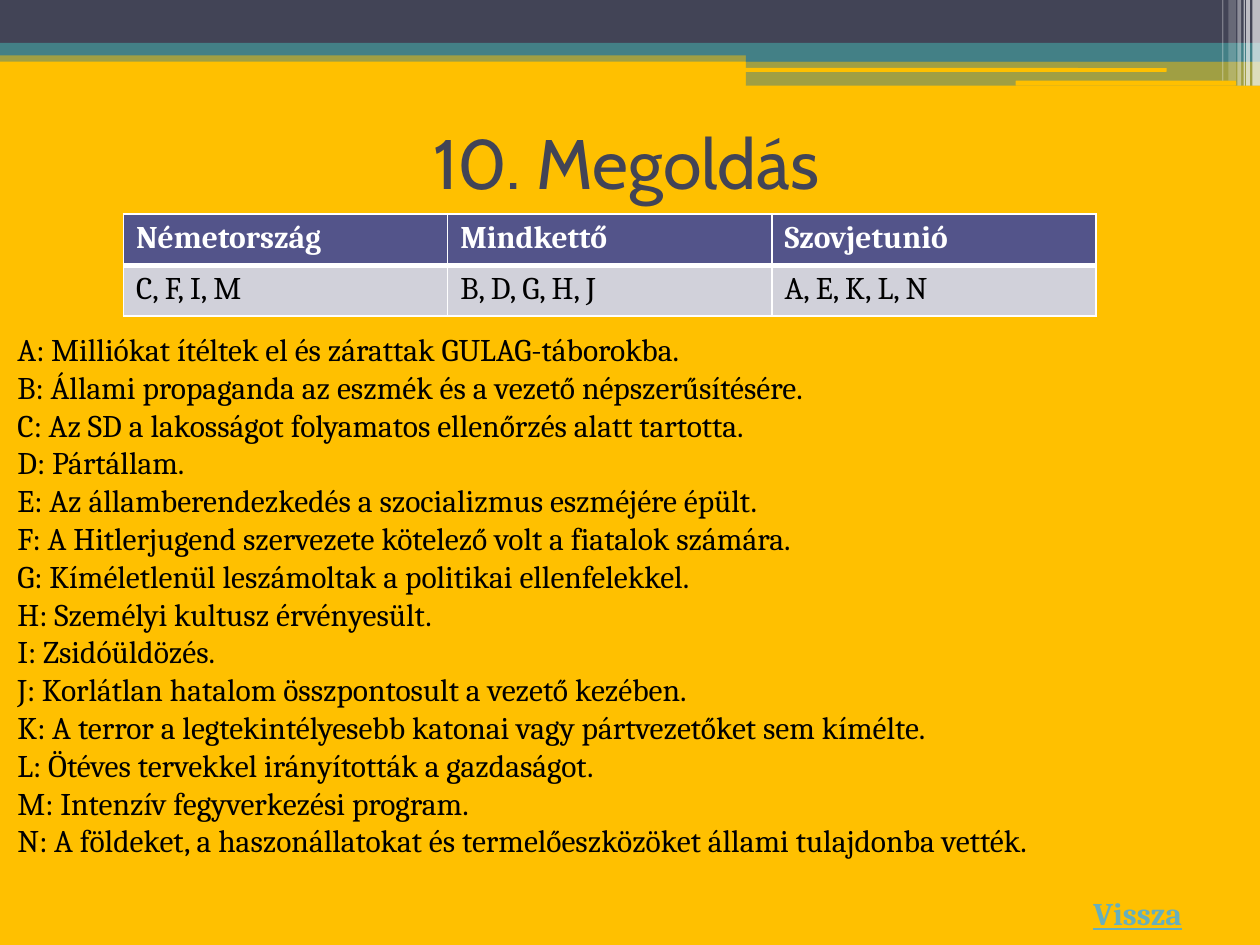
from lxml import etree
from pptx import Presentation, util as u
from pptx.dml.color import RGBColor
from pptx.enum import shapes, text
from pptx.oxml.ns import qn

COLORS = {
    "back": "FFC000", "navy": "424456", "teal": "438086", "white": "FFFFFF",
    "black": "000000", "head": "53548A", "body": "D1D1DA", "link": "67AFBD",
}
COLS, ROWS = 100, 75
RECT = shapes.MSO_SHAPE.RECTANGLE
ROUND = shapes.MSO_SHAPE.ROUNDED_RECTANGLE


class Deck:
    """Holds the style and the current slide; lengths are grid columns and rows."""

    fonts = {
        "title": {"name": "Cabin", "size": u.Pt(40), "color": "navy"},
        "text": {"name": "Cambria", "size": u.Pt(18), "color": "black", "bold": False},
        "head": {"name": "Cambria", "size": u.Pt(18), "color": "white", "bold": True},
        "link": {"name": "Cambria", "size": u.Pt(18), "color": "link",
                 "bold": True, "underline": True},
    }

    def __init__(self, width, height):
        self.prs = Presentation()
        self.prs.slide_width, self.prs.slide_height = u.Inches(width), u.Inches(height)
        self.col = self.prs.slide_width / COLS
        self.row = self.prs.slide_height / ROWS

    def slide(self, back):
        self.s = self.prs.slides.add_slide(self.prs.slide_layouts[6])
        self.paint(self.s.background.fill, back)

    def box(self, x, y, w, h):
        return [round(v) for v in (x * self.col, y * self.row, w * self.col, h * self.row)]

    def paint(self, fill, color):
        fill.solid()
        fill.fore_color.rgb = RGBColor.from_string(COLORS[color])

    def bar(self, at, color, alpha=100, kind=RECT):
        sp = self.s.shapes.add_shape(kind, *self.box(*at))
        sp.shadow.inherit = False
        sp.line.fill.background()
        self.paint(sp.fill, color)
        if alpha < 100:
            clr = sp._element.spPr.find(qn("a:solidFill"))[0]
            etree.SubElement(clr, qn("a:alpha"), val=str(alpha * 1000))

    def add_words(self, p, words, style):
        r = p.add_run()
        r.text = words
        for key, value in self.fonts[style].items():
            if key == "color":
                r.font.color.rgb = RGBColor.from_string(COLORS[value])
            else:
                setattr(r.font, key, value)

    def text(self, at, lines, style, **frame):
        tf = self.s.shapes.add_textbox(*self.box(*at)).text_frame
        for key, value in {"word_wrap": True, **frame}.items():
            setattr(tf, key, value)
        for i, line in enumerate(lines):
            p = tf.add_paragraph() if i else tf.paragraphs[0]
            self.add_words(p, line, style)
        return tf

    def stroke(self, tag, color, width):
        ln = etree.Element(qn(tag), w=str(u.Pt(width)))
        fill = etree.SubElement(ln, qn("a:solidFill"))
        etree.SubElement(fill, qn("a:srgbClr"), val=COLORS[color])
        return ln

    def table(self, at, rows):
        tb = self.s.shapes.add_table(len(rows), len(rows[0]), *self.box(*at)).table
        for i, row in enumerate(rows):
            for j, words in enumerate(row):
                cell = tb.cell(i, j)
                self.add_words(cell.text_frame.paragraphs[0], words, "text" if i else "head")
                # Borders precede the fill; the rule under the header is thicker
                tcPr = cell._tc.get_or_add_tcPr()
                for side in ("lnL", "lnR", "lnT", "lnB"):
                    heavy = side == ("lnT" if i else "lnB")
                    tcPr.append(self.stroke("a:" + side, "white", 3 if heavy else 1))
                self.paint(cell.fill, "body" if i else "head")


def main():
    deck = Deck(10, 7.5)
    deck.slide("back")

    # Top band
    for at, color, alpha, kind in (
        ((0, 4, 100, 0.9), "teal", 50, RECT),
        ((0, 0, 100, 3.4), "navy", 100, RECT),
        ((0, 3.4, 100, 1), "teal", 100, RECT),
        ((59.2, 3.9, 40.8, 1), "teal", 100, RECT),
        ((59.2, 4.8, 40.8, 2), "teal", 50, RECT),
        ((59.1, 5.4, 33.5, 0.3), "back", 100, ROUND),
        ((80.6, 6.4, 17.5, 0.4), "back", 100, ROUND),
    ):
        deck.bar(at, color, alpha, kind)

    # Light stripes in the corner: left, width, height, opacity
    for x, w, h, alpha in (
        (99.4, 0.6, 6.8, 65), (98.9, 0.3, 6.8, 65), (98.7, 0.1, 6.8, 60),
        (98.2, 0.3, 6.8, 40), (97.5, 0.6, 6.4, 20), (97, 0.1, 6.4, 30),
    ):
        deck.bar((x, 0, w, h), "white", alpha)

    # Title
    tf = deck.text((4.7, 7, 90, 11.7), ["10. Megoldás"], "title",
                   vertical_anchor=text.MSO_ANCHOR.MIDDLE)
    tf.paragraphs[0].alignment = text.PP_ALIGN.CENTER

    # Back label
    tf = deck.text((85.8, 70.5, 10.3, 4), ["Vissza"], "link", word_wrap=False,
                   auto_size=text.MSO_AUTO_SIZE.SHAPE_TO_FIT_TEXT)
    tf.paragraphs[0].runs[0].font._element.insert(0, deck.stroke("a:ln", "white", 1.4))

    # Answer table
    deck.table((9.8, 17, 77.2, 8.1), [
        ["Németország", "Mindkettő", "Szovjetunió"],
        ["C, F, I, M", "B, D, G, H, J", "A, E, K, L, N"],
    ])

    # Statements
    deck.text((0.4, 25.7, 96.9, 43.4), [
        "A: Milliókat ítéltek el és zárattak GULAG-táborokba.",
        "B: Állami propaganda az eszmék és a vezető népszerűsítésére.",
        "C: Az SD a lakosságot folyamatos ellenőrzés alatt tartotta.",
        "D: Pártállam.",
        "E: Az államberendezkedés a szocializmus eszméjére épült.",
        "F: A Hitlerjugend szervezete kötelező volt a fiatalok számára.",
        "G: Kíméletlenül leszámoltak a politikai ellenfelekkel.",
        "H: Személyi kultusz érvényesült.",
        "I: Zsidóüldözés.",
        "J: Korlátlan hatalom összpontosult a vezető kezében.",
        "K: A terror a legtekintélyesebb katonai vagy pártvezetőket sem kímélte.",
        "L: Ötéves tervekkel irányították a gazdaságot.",
        "M: Intenzív fegyverkezési program.",
        "N: A földeket, a haszonállatokat és termelőeszközöket állami tulajdonba vették.",
    ], "text", auto_size=text.MSO_AUTO_SIZE.SHAPE_TO_FIT_TEXT)

    deck.prs.save("out.pptx")


if __name__ == "__main__":
    main()
